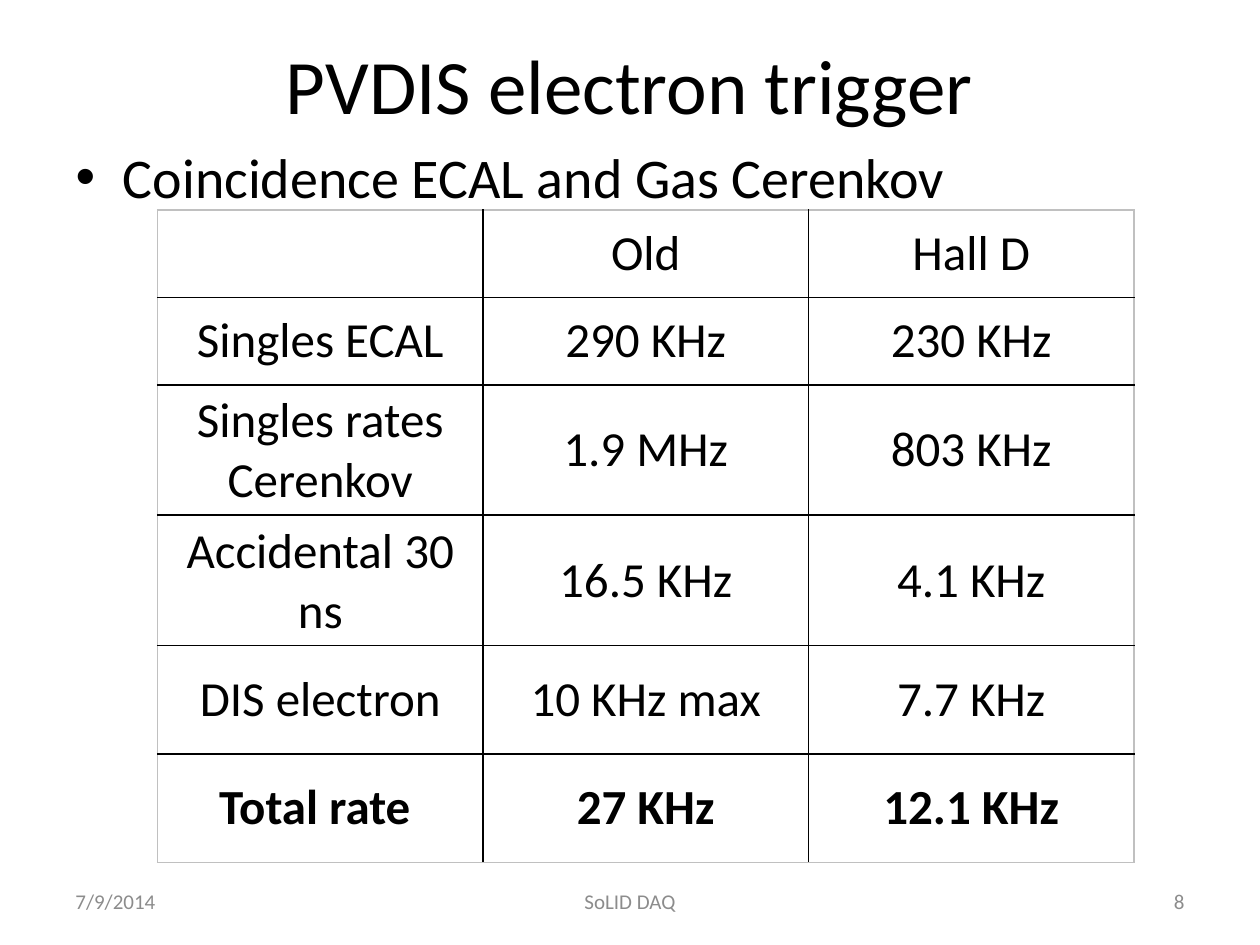
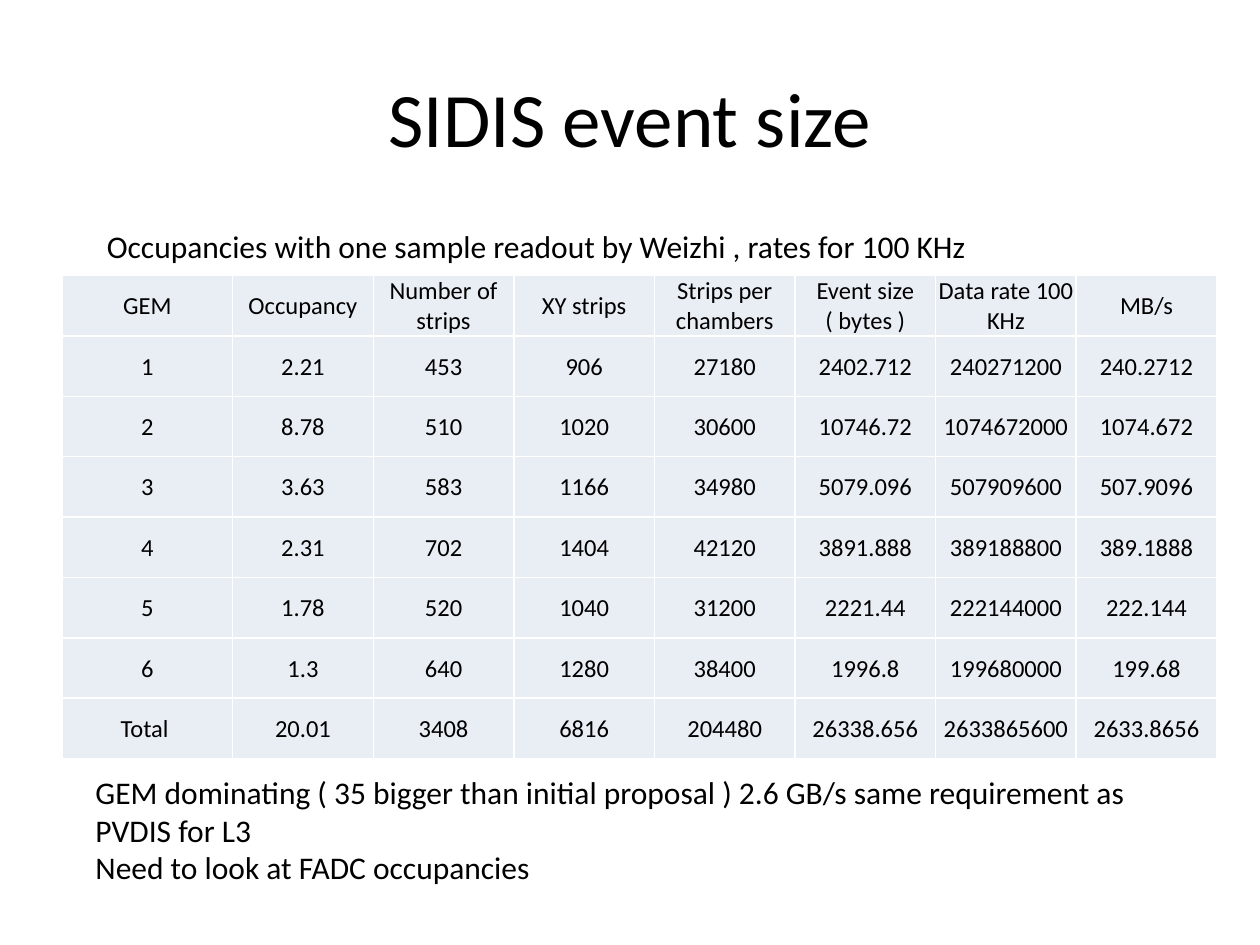
from dataclasses import dataclass

from lxml import etree
from pptx import Presentation
from pptx.dml import color
from pptx.enum import text
from pptx.oxml import ns
from pptx.util import Pt

FONT = "Calibri"
COLORS = {
    "ink": "000000",
    "footer": "8C8C8C",
    "outer_grid": "C0C0C0",
    "paper": "FFFFFF",
    "pale_blue": "E9EDF4",
}
LEFT, CENTER, RIGHT = text.PP_ALIGN.LEFT, text.PP_ALIGN.CENTER, text.PP_ALIGN.RIGHT
MIDDLE = text.MSO_ANCHOR.MIDDLE


@dataclass(frozen=True)
class Box:
    left: float
    top: float
    width: float
    height: float


@dataclass(frozen=True)
class Label:
    lines: tuple[str, ...]
    box: Box
    size: float = 18
    color: str = "ink"
    align: text.PP_ALIGN = LEFT
    anchor: text.MSO_ANCHOR = text.MSO_ANCHOR.TOP
    wrap: bool = True


@dataclass(frozen=True)
class Grid:
    left: float
    top: float
    columns: list[float]
    heights: list[float]
    size: float
    inner: str
    outer: str
    fill: str | None = None
    margins: tuple[float, float, float, float] = (7.2, 3.6, 7.2, 3.6)
    bold_total: bool = False


FOOTERS = [
    Label(("7/9/2014",), Box(36, 500.5, 168, 28.75), 12, "footer", LEFT, MIDDLE),
    Label(("SoLID DAQ",), Box(246, 500.5, 228, 28.75), 12, "footer", CENTER, MIDDLE),
    Label(("8",), Box(516, 500.5, 168, 28.75), 12, "footer", RIGHT, MIDDLE),
]

TRIGGER_RATES = [
    ("", "Old", "Hall D"),
    ("Singles ECAL", "290 KHz", "230 KHz"),
    ("Singles rates Cerenkov", "1.9 MHz", "803 KHz"),
    ("Accidental 30 ns", "16.5 KHz", "4.1 KHz"),
    ("DIS electron", "10 KHz max", "7.7 KHz"),
    ("Total rate ", "27 KHz", "12.1 KHz"),
]
TRIGGER_GRID = Grid(90, 120, [186] * 3, [50, 50, 71.5, 71.5, 62, 62], 28,
                    "ink", "outer_grid", bold_total=True)

GEM_SIZES = [
    ("GEM", "Occupancy", "Number of strips", "XY strips", "Strips per chambers",
     "Event size ( bytes )", "Data rate 100 KHz", "MB/s"),
    ("1", "2.21", "453", "906", "27180", "2402.712", "240271200", "240.2712"),
    ("2", "8.78", "510", "1020", "30600", "10746.72", "1074672000", "1074.672"),
    ("3", "3.63", "583", "1166", "34980", "5079.096", "507909600", "507.9096"),
    ("4", "2.31", "702", "1404", "42120", "3891.888", "389188800", "389.1888"),
    ("5", "1.78", "520", "1040", "31200", "2221.44", "222144000", "222.144"),
    ("6", "1.3", "640", "1280", "38400", "1996.8", "199680000", "199.68"),
    ("Total ", "20.01", "3408", "6816", "204480", "26338.656", "2633865600", "2633.8656"),
]
GEM_GRID = Grid(35.5, 157.2, [97.5] + [80.35] * 7, [34.5] * 8, 14,
                "paper", "paper", "pale_blue", (0.7, 0.7, 0.7, 0))

SAMPLE_NOTE = Label(("Occupancies with one sample readout by Weizhi , rates for 100 KHz",),
                    Box(54, 126, 507, 29), wrap=False)
CONCLUSIONS = Label(
    ("GEM dominating ( 35 bigger than initial proposal ) 2.6 GB/s same requirement as PVDIS for L3",
     "Need to look at FADC occupancies"),
    Box(47.5, 438, 648, 72.7))


def rgb(name: str) -> color.RGBColor:
    return color.RGBColor.from_string(COLORS[name])


def write(paragraph, words: str, size: float, ink: str = "ink", bold: bool = False) -> None:
    run = paragraph.add_run()
    run.text = words
    run.font.name = FONT
    run.font.size = Pt(size)
    run.font.bold = bold
    run.font.color.rgb = rgb(ink)


def place(shape, box: Box) -> None:
    shape.left, shape.top = Pt(box.left), Pt(box.top)
    shape.width, shape.height = Pt(box.width), Pt(box.height)


def add_title(slide, words: str, top: float) -> None:
    title = slide.shapes.title
    place(title, Box(36, top, 648, 90))
    title.text_frame.vertical_anchor = MIDDLE
    paragraph = title.text_frame.paragraphs[0]
    paragraph.alignment = CENTER
    write(paragraph, words, 44)


def add_label(slide, label: Label) -> None:
    box = label.box
    frame = slide.shapes.add_textbox(
        Pt(box.left), Pt(box.top), Pt(box.width), Pt(box.height)).text_frame
    frame.word_wrap = label.wrap
    frame.vertical_anchor = label.anchor
    for index, line in enumerate(label.lines):
        paragraph = frame.add_paragraph() if index else frame.paragraphs[0]
        paragraph.alignment = label.align
        write(paragraph, line, label.size, label.color)


def add_border(cell, side: str, name: str) -> None:
    line = etree.SubElement(cell._tc.get_or_add_tcPr(), ns.qn(f"a:ln{side}"), w=str(Pt(1)))
    solid = etree.SubElement(line, ns.qn("a:solidFill"))
    etree.SubElement(solid, ns.qn("a:srgbClr"), val=COLORS[name])


def add_grid(slide, rows: list[tuple[str, ...]], grid: Grid) -> None:
    table = slide.shapes.add_table(
        len(rows), len(grid.columns), Pt(grid.left), Pt(grid.top),
        Pt(sum(grid.columns)), Pt(sum(grid.heights))).table
    table.first_row = table.horz_banding = False
    for column, width in zip(table.columns, grid.columns):
        column.width = Pt(width)
    last_row, last_column = len(rows) - 1, len(grid.columns) - 1
    for r, values in enumerate(rows):
        table.rows[r].height = Pt(grid.heights[r])
        for c, value in enumerate(values):
            cell = table.cell(r, c)
            on_edge = {"L": c == 0, "R": c == last_column, "T": r == 0, "B": r == last_row}
            for side, outside in on_edge.items():
                add_border(cell, side, grid.outer if outside else grid.inner)
            if grid.fill:
                cell.fill.solid()
                cell.fill.fore_color.rgb = rgb(grid.fill)
            else:
                cell.fill.background()
            cell.vertical_anchor = MIDDLE
            (cell.margin_left, cell.margin_top,
             cell.margin_right, cell.margin_bottom) = map(Pt, grid.margins)
            paragraph = cell.text_frame.paragraphs[0]
            paragraph.alignment = CENTER
            if value:
                write(paragraph, value, grid.size, bold=grid.bold_total and r == last_row)


def build_trigger_slide(deck) -> None:
    slide = deck.slides.add_slide(deck.slide_layouts[1])
    add_title(slide, "PVDIS electron trigger", 3)
    coincidence = slide.placeholders[1]
    place(coincidence, Box(36, 78, 648, 356.4))
    write(coincidence.text_frame.paragraphs[0], "Coincidence ECAL and Gas Cerenkov", 32)
    for footer in FOOTERS:
        add_label(slide, footer)
    add_grid(slide, TRIGGER_RATES, TRIGGER_GRID)


def build_event_size_slide(deck) -> None:
    slide = deck.slides.add_slide(deck.slide_layouts[5])
    add_title(slide, "SIDIS event size", 21.6)
    add_grid(slide, GEM_SIZES, GEM_GRID)
    add_label(slide, SAMPLE_NOTE)
    add_label(slide, CONCLUSIONS)


def main() -> None:
    deck = Presentation()
    deck.slide_width, deck.slide_height = Pt(720), Pt(540)
    build_trigger_slide(deck)
    build_event_size_slide(deck)
    deck.save("out.pptx")


if __name__ == "__main__":
    main()
